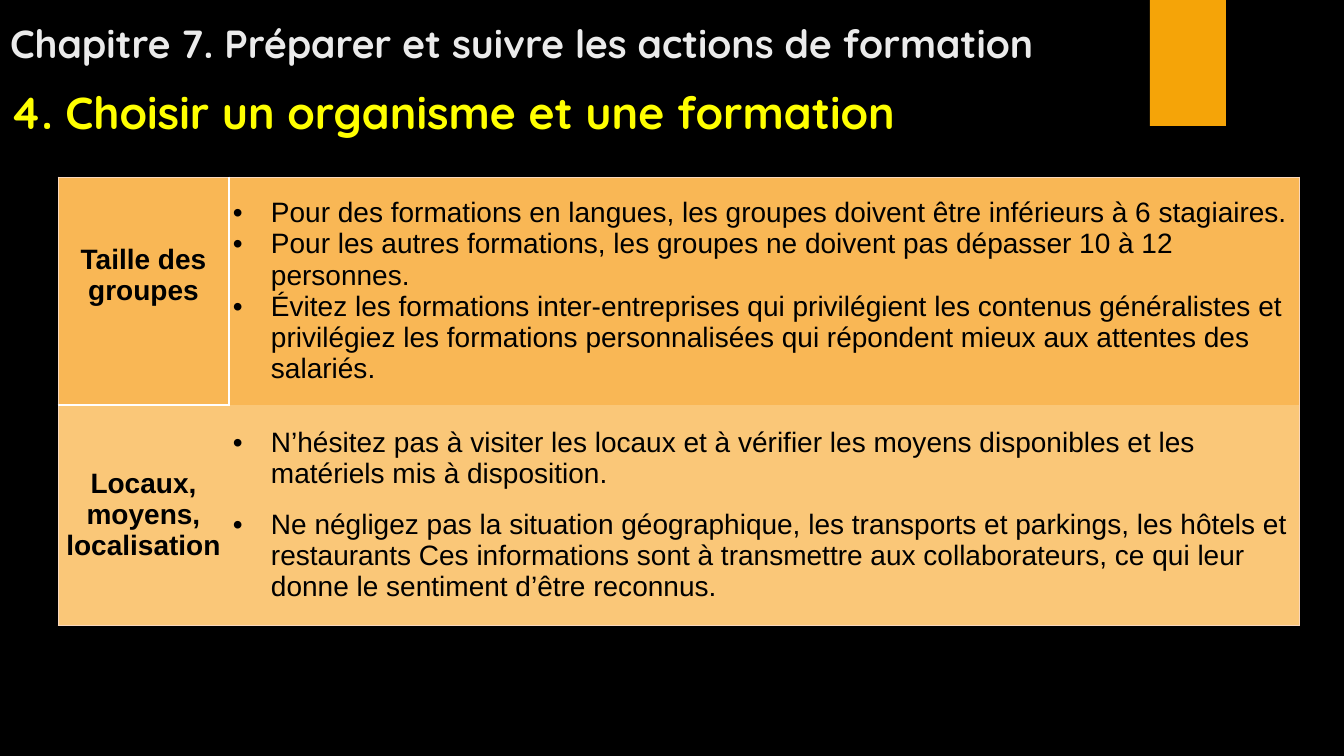
from lxml import etree
from pptx import Presentation
from pptx import util as u
from pptx.dml.color import RGBColor
from pptx.enum import shapes, text
from pptx.oxml import ns

EMU_PER_PX = 914400 / 100.8
THIN = ("FAD8BD", 0.75)
DIVIDER = ("FFFFFF", 1.5)
RULE = ("FFFFFF", 2.25)

CRITERIA = [
    ("Taille des groupes", [
        "Pour des formations en langues, les groupes doivent être inférieurs à 6 stagiaires.",
        "Pour les autres formations, les groupes ne doivent pas dépasser 10 à 12 personnes.",
        "Évitez les formations inter-entreprises qui privilégient les contenus généralistes et "
        "privilégiez les formations personnalisées qui répondent mieux aux attentes des salariés.",
    ]),
    ("Locaux, moyens, localisation", [
        "N’hésitez pas à visiter les locaux et à vérifier les moyens disponibles et les "
        "matériels mis à disposition.",
        "Ne négligez pas la situation géographique, les transports et parkings, les hôtels et "
        "restaurants Ces informations sont à transmettre aux collaborateurs, ce qui leur donne "
        "le sentiment d’être reconnus.",
    ]),
]
ROW_FILLS = ["F9B755", "FAC778"]
ROW_HEIGHTS = [228, 220]
COLUMN_WIDTHS = [171, 1071]
LABEL_BOTTOMS = [31, 0]
ADVICE_SPACING = [(0, 0), (12, 2)]
BORDERS = [
    [{"L": THIN, "R": DIVIDER, "T": THIN, "B": RULE}, {"L": DIVIDER, "R": THIN, "T": THIN}],
    [{"L": THIN, "T": RULE, "B": THIN}, {"R": THIN, "B": THIN}],
]


def px(length):
    return u.Emu(round(length * EMU_PER_PX))


def color(value):
    return RGBColor.from_string(value)


def set_font(paragraph, name, size, value, bold):
    font = paragraph.font
    font.name, font.size, font.bold = name, u.Pt(size), bold
    font.color.rgb = color(value)


def write_heading(heading, wording, top, size, value):
    heading.left, heading.top, heading.width, heading.height = map(px, (0, top, 1300, 72))
    frame = heading.text_frame
    frame.word_wrap = True
    frame.auto_size = text.MSO_AUTO_SIZE.NONE
    frame.vertical_anchor = text.MSO_ANCHOR.BOTTOM
    frame.text = wording
    frame.paragraphs[0].alignment = text.PP_ALIGN.LEFT
    set_font(frame.paragraphs[0], "Quicksand", size, value, True)


def add_accent(slide):
    accent = slide.shapes.add_shape(shapes.MSO_SHAPE.RECTANGLE, *map(px, (1150, 0, 76, 126)))
    accent.shadow.inherit = False
    accent.fill.solid()
    accent.fill.fore_color.rgb = color("F5A408")
    accent.line.fill.background()


def set_borders(cell, borders):
    properties = cell._tc.get_or_add_tcPr()
    for side in "LRTB":
        edge = etree.SubElement(properties, ns.qn(f"a:ln{side}"))
        if side in borders:
            value, width = borders[side]
            edge.set("w", str(u.Pt(width)))
            fill = etree.SubElement(edge, ns.qn("a:solidFill"))
            etree.SubElement(fill, ns.qn("a:srgbClr"), val=value)
        else:
            etree.SubElement(edge, ns.qn("a:noFill"))


def format_cell(cell, fill, borders, bottom=0):
    set_borders(cell, borders)
    cell.fill.solid()
    cell.fill.fore_color.rgb = color(fill)
    cell.vertical_anchor = text.MSO_ANCHOR.MIDDLE
    cell.margin_left = cell.margin_right = px(4)
    cell.margin_top, cell.margin_bottom = 0, px(bottom)


def write_label(cell, label):
    cell.text = label
    paragraph = cell.text_frame.paragraphs[0]
    paragraph.alignment = text.PP_ALIGN.CENTER
    set_font(paragraph, "Arial", 20, "000000", True)


def write_bullets(cell, items, spacing):
    before, after = spacing
    cell.text = "\n".join(items)
    for index, paragraph in enumerate(cell.text_frame.paragraphs):
        properties = paragraph._p.get_or_add_pPr()
        properties.set("marL", str(px(38)))
        properties.set("indent", str(px(-38)))
        etree.SubElement(properties, ns.qn("a:buFont"), typeface="Arial")
        etree.SubElement(properties, ns.qn("a:buChar"), char="•")
        paragraph.space_before = u.Pt(before if index else 0)
        paragraph.space_after = u.Pt(after)
        set_font(paragraph, "Arial", 20, "000000", False)


def add_criteria(slide):
    area = map(px, (58, 177, sum(COLUMN_WIDTHS), sum(ROW_HEIGHTS)))
    criteria = slide.shapes.add_table(len(CRITERIA), len(COLUMN_WIDTHS), *area).table
    criteria.first_row = criteria.horz_banding = False
    for column, width in zip(criteria.columns, COLUMN_WIDTHS):
        column.width = px(width)
    for index, (label, advice) in enumerate(CRITERIA):
        criteria.rows[index].height = px(ROW_HEIGHTS[index])
        label_cell, advice_cell = criteria.rows[index].cells
        format_cell(label_cell, ROW_FILLS[index], BORDERS[index][0], LABEL_BOTTOMS[index])
        format_cell(advice_cell, ROW_FILLS[index], BORDERS[index][1])
        write_label(label_cell, label)
        write_bullets(advice_cell, advice, ADVICE_SPACING[index])


def main():
    deck = Presentation()
    deck.slide_width, deck.slide_height = px(1344), px(756)
    slide = deck.slides.add_slide(deck.slide_layouts[5])
    slide.background.fill.solid()
    slide.background.fill.fore_color.rgb = color("000000")
    add_accent(slide)
    write_heading(slide.shapes.title, "Chapitre 7. Préparer et suivre les actions de formation",
                  -1, 28, "EBEBEB")
    section = slide.shapes.add_textbox(0, 0, 0, 0)
    write_heading(section, "4. Choisir un organisme et une formation", 71, 32, "FFFF00")
    add_criteria(slide)
    deck.save("out.pptx")


if __name__ == "__main__":
    main()
